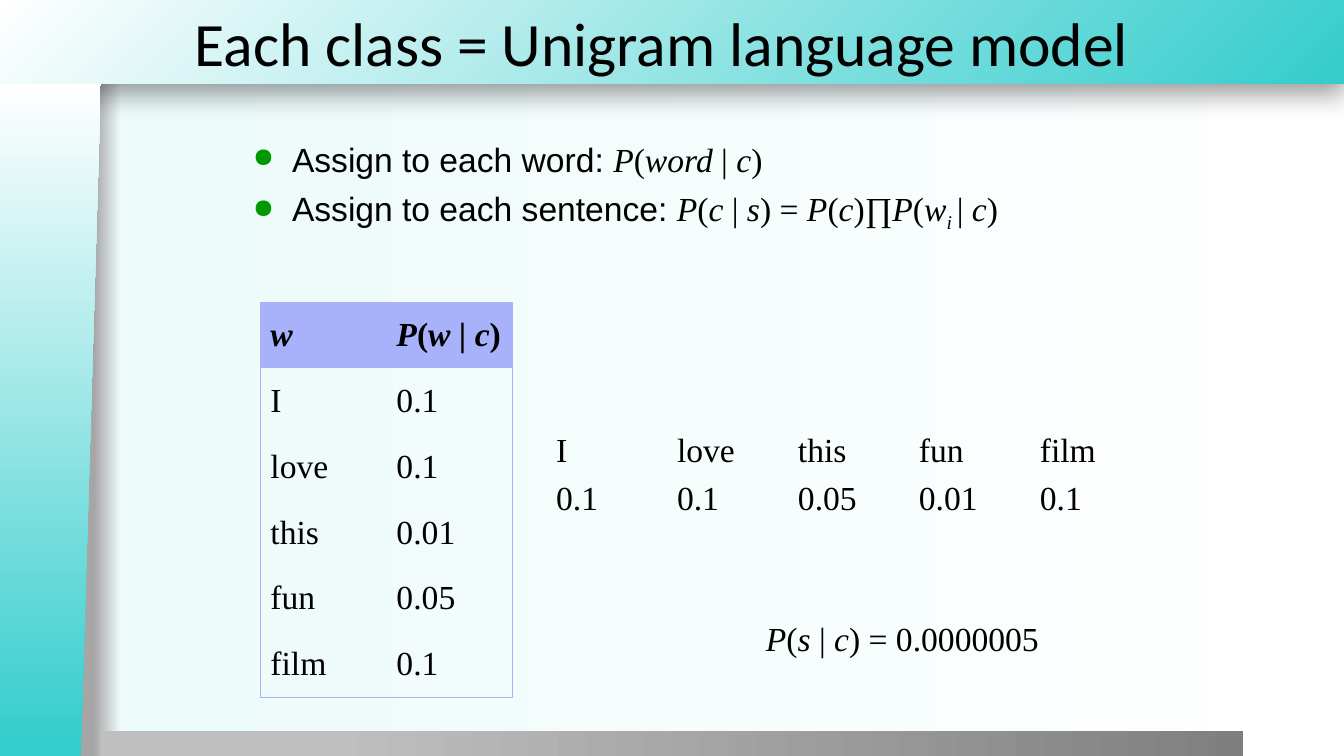
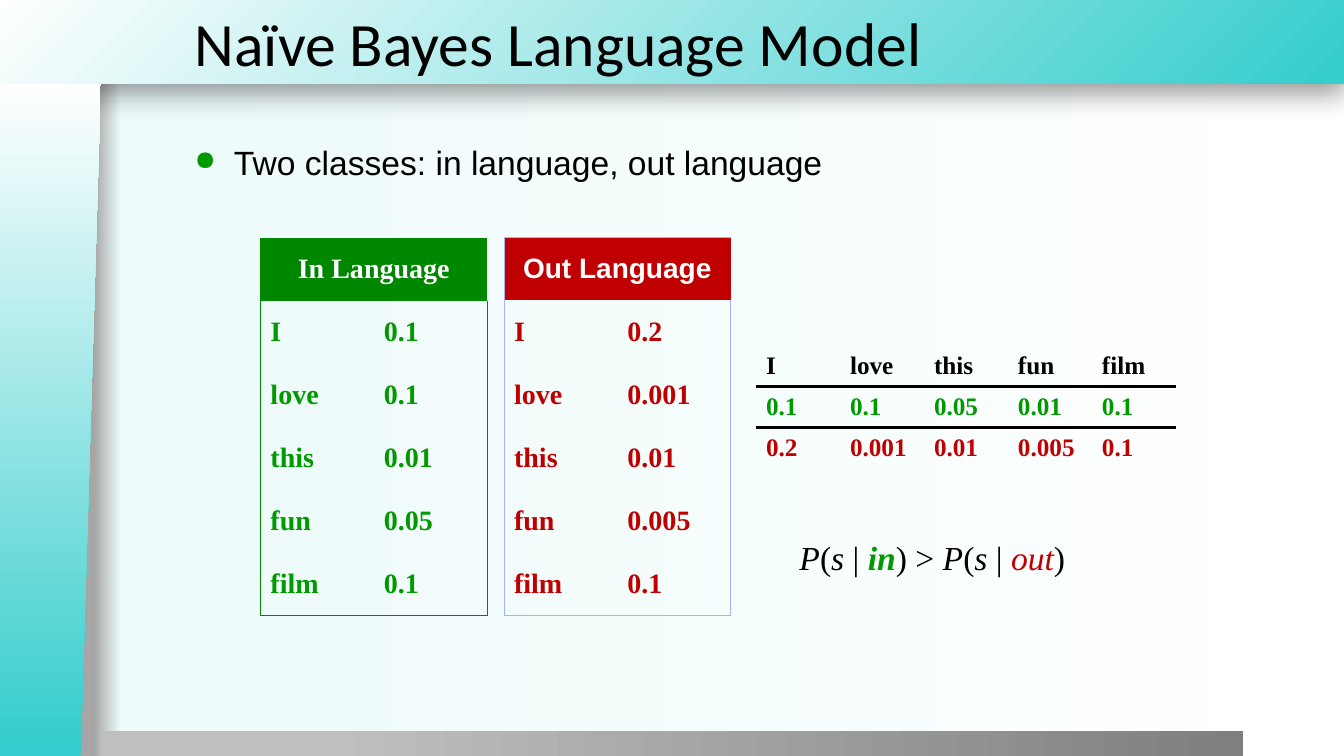
from dataclasses import dataclass
from itertools import groupby

from lxml import etree
from pptx import Presentation
from pptx.dml.color import RGBColor
from pptx.enum.shapes import MSO_SHAPE
from pptx.enum.text import MSO_ANCHOR, PP_ALIGN
from pptx.oxml.ns import qn
from pptx.util import Pt

RECTANGLE = MSO_SHAPE.RECTANGLE
SLOPED = MSO_SHAPE.FLOWCHART_MANUAL_INPUT
TOP, MIDDLE = MSO_ANCHOR.TOP, MSO_ANCHOR.MIDDLE
LEFT, CENTER = PP_ALIGN.LEFT, PP_ALIGN.CENTER

COLORS = {
    "black": "000000", "white": "FFFFFF", "teal": "34CCCC", "mist": "EDFBFB",
    "gray": "A6A6A6", "silver": "BFBFBF", "steel": "7F7F7F",
    "green": "009900", "dark green": "008700", "red": "C00000",
    "lavender": "A7B2FB",
}
SERIF, SANS, TITLE_FONT = "Times New Roman", "Arial", "Calibri"
PLAIN_TABLE = "{2D5ABB26-0587-4C30-8999-92F81FD0307C}"
WORDS = ["I", "love", "this", "fun", "film"]


@dataclass
class Span:
    text: str
    font: str = SERIF
    size: float = 24
    color: str = "black"
    bold: bool = False
    italic: bool = False
    subscript: bool = False


def formula(text, bold=False, marks=None):
    """Set letters in italics and signs upright; marks styles single words."""
    spans = []
    for is_word, letters in groupby(text, str.isalpha):
        span = Span("".join(letters), bold=bold, italic=is_word)
        if marks and span.text in marks:
            span.color, span.bold = marks[span.text]
        spans.append(span)
    return spans


def cells(texts, **style):
    return [[Span(text, **style)] for text in texts]


def word_rows(values, **style):
    return [cells(pair, **style) for pair in zip(WORDS, values)]


def add_child(parent, tag, **attributes):
    return etree.SubElement(parent, qn(tag), attributes)


def add_color(parent, color):
    return add_child(parent, "a:srgbClr", val=COLORS[color])


class SlideDeck:
    def __init__(self):
        self.deck = Presentation()
        self.deck.slide_width, self.deck.slide_height = Pt(960), Pt(540)
        self.page = None

    def new_page(self, title):
        self.page = self.deck.slides.add_slide(self.deck.slide_layouts[6])
        self.gradient(self.page.background.fill, self.page.element,
                      [(7, "gray"), (9, "mist"), (100, "white")])
        banner = self.band(RECTANGLE, 0, 0, 960, 60,
                           [(0, "teal"), (100, "white")], radial=True)
        self.shadow(banner)
        self.band(RECTANGLE, 72, 522, 816, 18, [(20, "silver"), (100, "steel")])
        side = self.band(SLOPED, -204, 264, 480, 72, [(1, "teal"), (100, "white")])
        side.rotation = 270
        side.element.spPr.find(qn("a:xfrm")).set("flipV", "1")
        self.text(132, 0, 828, 60, [[Span(title, TITLE_FONT, 44)]], anchor=MIDDLE)

    def gradient(self, fill, element, stops, radial=False):
        fill.gradient()
        gradient = element.find(".//" + qn("a:gradFill"))
        for child in list(gradient):
            gradient.remove(child)
        gradient.set("rotWithShape", "1")
        stop_list = add_child(gradient, "a:gsLst")
        for position, color in stops:
            add_color(add_child(stop_list, "a:gs", pos=str(position * 1000)), color)
        if radial:
            center = add_child(gradient, "a:path")
            center.set("path", "circle")
            add_child(center, "a:fillToRect", l="100000", t="100000")
        else:
            add_child(gradient, "a:lin", ang="0", scaled="0")

    def band(self, kind, left, top, width, height, stops, radial=False):
        shape = self.page.shapes.add_shape(
            kind, Pt(left), Pt(top), Pt(width), Pt(height))
        shape.shadow.inherit = False
        shape.line.fill.background()
        self.gradient(shape.fill, shape.element, stops, radial)
        return shape

    def shadow(self, shape):
        effects = shape.element.spPr.find(qn("a:effectLst"))
        shadow = add_child(effects, "a:outerShdw", blurRad=str(Pt(20)),
                           dist=str(Pt(6)), dir="5400000", algn="t",
                           rotWithShape="0")
        add_child(add_color(shadow, "black"), "a:alpha", val="40000")

    def add_spans(self, para, spans):
        for span in spans:
            run = para.add_run()
            run.text = span.text
            font = run.font
            font.name, font.size = span.font, Pt(span.size)
            font.bold, font.italic = span.bold, span.italic
            font.color.rgb = RGBColor.from_string(COLORS[span.color])
            if span.subscript:
                run._r.get_or_add_rPr().set("baseline", "-25000")

    def bullet(self, para):
        para.space_before = Pt(5.5)
        properties = para._p.get_or_add_pPr()
        properties.set("marL", str(Pt(28)))
        properties.set("indent", str(Pt(-28)))
        add_color(add_child(properties, "a:buClr"), "green")
        add_child(properties, "a:buSzPct", val="80000")
        add_child(properties, "a:buChar", char="●")

    def text(self, left, top, width, height, paras, anchor=TOP, bullets=False):
        box = self.page.shapes.add_textbox(Pt(left), Pt(top), Pt(width), Pt(height))
        frame = box.text_frame
        frame.word_wrap = True
        frame.vertical_anchor = anchor
        for index, spans in enumerate(paras):
            para = frame.add_paragraph() if index else frame.paragraphs[0]
            if bullets:
                self.bullet(para)
            self.add_spans(para, spans)

    def borders(self, cell, sides, color, weight):
        properties = cell._tc.get_or_add_tcPr()
        for index, side in enumerate(sides):
            line = etree.Element(qn("a:ln" + side), w=str(Pt(weight)))
            add_color(add_child(line, "a:solidFill"), color)
            properties.insert(index, line)

    def table(self, left, top, column_width, row_height, rows,
              header_fill=None, outline=None, ruled=False):
        """Draw rows of cells; a row with one cell spans the whole width."""
        row_count, column_count = len(rows), len(rows[-1])
        frame = self.page.shapes.add_table(
            row_count, column_count, Pt(left), Pt(top),
            Pt(column_width * column_count), Pt(row_height * row_count))
        table = frame.table
        table.first_row = table.horz_banding = False
        frame.element.find(".//" + qn("a:tableStyleId")).text = PLAIN_TABLE
        for column in table.columns:
            column.width = Pt(column_width)
        for y, row in enumerate(rows):
            table.rows[y].height = Pt(row_height)
            if len(row) < column_count:
                table.cell(y, 0).merge(table.cell(y, column_count - 1))
            for x in range(column_count):
                cell = table.cell(y, x)
                cell.vertical_anchor = MIDDLE
                cell.margin_top = cell.margin_bottom = Pt(3)
                if header_fill and y == 0:
                    cell.fill.solid()
                    cell.fill.fore_color.rgb = RGBColor.from_string(
                        COLORS[header_fill])
                else:
                    cell.fill.background()
                if x < len(row):
                    para = cell.text_frame.paragraphs[0]
                    para.alignment = LEFT if len(row) == column_count else CENTER
                    self.add_spans(para, row[x])
                if outline:
                    at_edge = {"L": x == 0, "R": x == column_count - 1,
                               "T": y == 0, "B": y == row_count - 1}
                    sides = [side for side, edge in at_edge.items() if edge]
                    self.borders(cell, sides, outline, 0.75)
                if ruled:
                    sides = "T" * (y > 0) + "B" * (y < row_count - 1)
                    self.borders(cell, sides, "black", 2.25)


def unigram_page(slides):
    slides.new_page("Each class = Unigram language model")
    slides.text(173.5, 96, 649, 417, [
        [Span("Assign to each word: ", SANS), *formula("P(word | c)")],
        [Span("Assign to each sentence: ", SANS),
         *formula("P(c | s) = P(c)∏P(w"),
         Span("i ", italic=True, subscript=True), *formula("| c)")],
    ], bullets=True)
    header = [formula("w", bold=True), formula("P(w | c)", bold=True)]
    slides.table(186, 216, 90, 47,
                 [header] + word_rows(["0.1", "0.1", "0.01", "0.05", "0.1"]),
                 header_fill="lavender", outline="lavender")
    slides.table(390, 304.5, 86.4, 33.6,
                 [cells(WORDS), cells(["0.1", "0.1", "0.05", "0.01", "0.1"])])
    slides.text(540, 438, 258, 36, [formula("P(s | c) = 0.0000005")])


def naive_bayes_page(slides):
    slides.new_page("Naïve Bayes Language Model")
    slides.text(132, 98, 756, 417,
                [[Span("Two classes: in language, out language", SANS)]],
                bullets=True)
    models = [
        (186, 170, "In Language", SERIF, "green", "dark green", "dark green",
         ["0.1", "0.1", "0.01", "0.05", "0.1"]),
        (360, 169.5, "Out Language", SANS, "red", "red", "lavender",
         ["0.2", "0.001", "0.01", "0.005", "0.1"]),
    ]
    for left, top, name, font, color, fill, outline, values in models:
        header = cells([name], font=font, size=20, color="white", bold=True)
        rows = word_rows(values, size=20, color=color, bold=True)
        slides.table(left, top, 81, 45, [header] + rows,
                     header_fill=fill, outline=outline)
    scores = [
        (WORDS, "black"),
        (["0.1", "0.1", "0.05", "0.01", "0.1"], "green"),
        (["0.2", "0.001", "0.01", "0.005", "0.1"], "red"),
    ]
    slides.table(540, 247, 60, 29.3,
                 [cells(texts, size=18, color=color, bold=True)
                  for texts, color in scores], ruled=True)
    marks = {"in": ("green", True), "out": ("red", False)}
    slides.text(564, 380, 258, 36, [formula("P(s | in) > P(s | out)", marks=marks)])


def main():
    slides = SlideDeck()
    unigram_page(slides)
    naive_bayes_page(slides)
    slides.deck.save("out.pptx")


if __name__ == "__main__":
    main()
